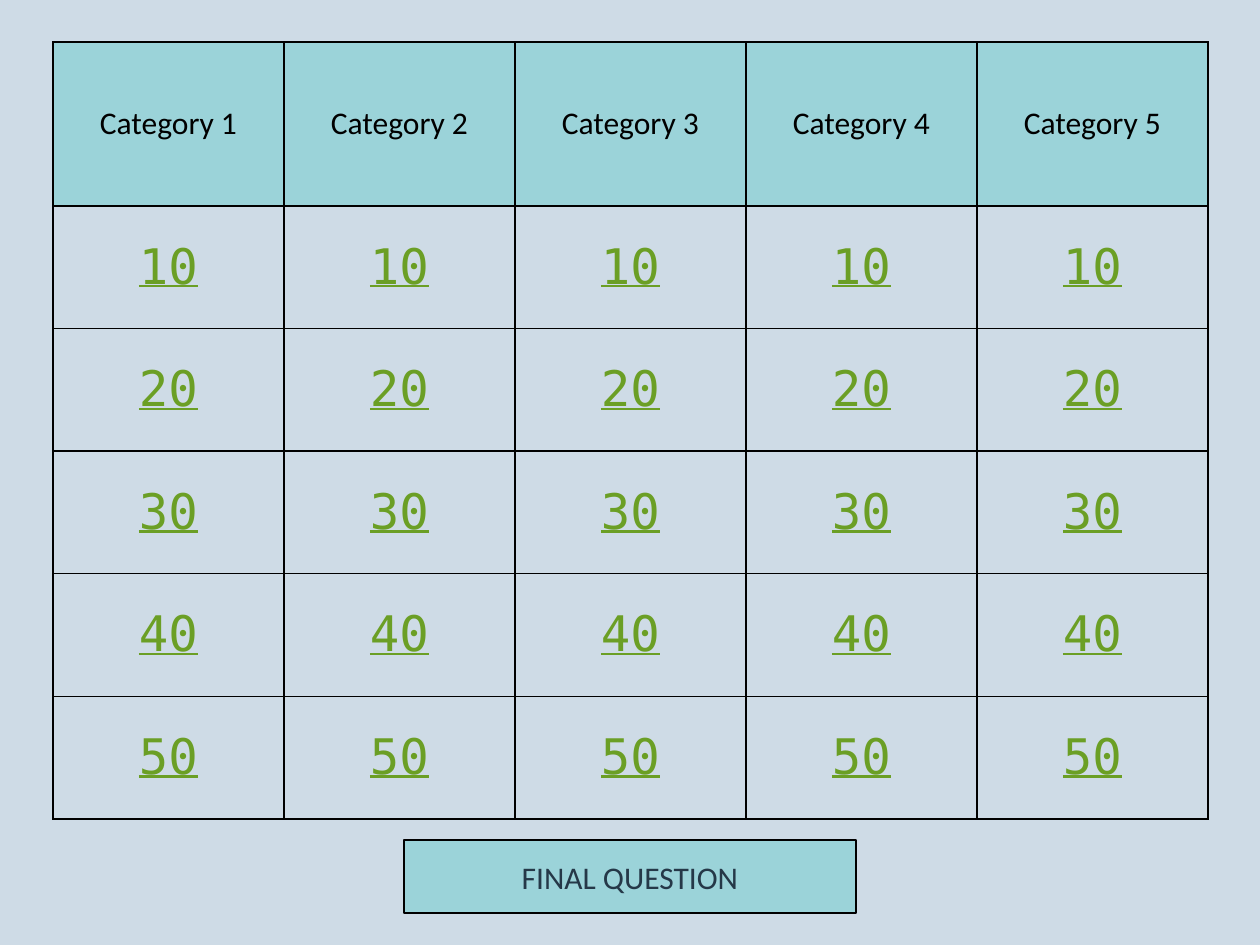
from lxml import etree
from pptx import Presentation
from pptx import util as u
from pptx.dml.color import RGBColor
from pptx.enum import shapes, text
from pptx.oxml import ns

PX = 914400 / 126
COLORS = {
    "background": "CEDBE6",
    "panel": "9BD3D9",
    "border": "000000",
    "category": "000000",
    "points": "6B9F25",
    "final": "253848",
}
CATEGORIES = [f"Category {n}" for n in range(1, 6)]
POINTS = [10, 20, 30, 40, 50]


def px(n):
    """Turn px into EMU."""
    return u.Emu(round(n * PX))


def rgb(name):
    """Look up a named colour."""
    return RGBColor.from_string(COLORS[name])


def write(tf, words, size, font, color, underline=False):
    """Set one centred, formatted line of text."""
    tf.text = words
    p = tf.paragraphs[0]
    p.alignment = text.PP_ALIGN.CENTER
    r = p.runs[0]
    r.font.size = u.Pt(size)
    r.font.name = font
    r.font.bold = False
    r.font.underline = underline
    r.font.color.rgb = rgb(color)
    return p


def add_space_before(p, percent):
    """Set paragraph spacing as a percentage of the line."""
    before = etree.SubElement(p._p.get_or_add_pPr(), ns.qn("a:spcBef"))
    etree.SubElement(before, ns.qn("a:spcPct"), val=str(percent * 1000))


def add_borders(cell):
    """Draw a one-point line on each side of a cell."""
    tcPr = cell._tc.get_or_add_tcPr()
    for i, side in enumerate(("lnL", "lnR", "lnT", "lnB")):
        ln = etree.Element(ns.qn(f"a:{side}"), w=str(u.Pt(1)))
        fill = etree.SubElement(ln, ns.qn("a:solidFill"))
        etree.SubElement(fill, ns.qn("a:srgbClr"), val=COLORS["border"])
        tcPr.insert(i, ln)


def add_board(slide, x, y, w, h, head_h):
    """Place the table of categories and point values."""
    rows, cols = len(POINTS) + 1, len(CATEGORIES)
    table = slide.shapes.add_table(rows, cols, px(x), px(y), px(w), px(h)).table
    table.first_row = table.horz_banding = False
    for col in table.columns:
        col.width = px(w / cols)
    for i, row in enumerate(table.rows):
        row.height = px((h - head_h) / len(POINTS) if i else head_h)
        for cell, category in zip(row.cells, CATEGORIES):
            cell.vertical_anchor = text.MSO_ANCHOR.MIDDLE
            if i:
                cell.fill.background()
                p = write(cell.text_frame, str(POINTS[i - 1]), 28,
                          "DejaVu Sans Mono", "points", True)
            else:
                cell.fill.solid()
                cell.fill.fore_color.rgb = rgb("panel")
                p = write(cell.text_frame, category, 18, "Calibri", "category")
            add_space_before(p, 20)
            add_borders(cell)


def add_final_button(slide, x, y, w, h):
    """Place the button for the last round."""
    sp = slide.shapes.add_shape(shapes.MSO_SHAPE.RECTANGLE, px(x), px(y), px(w), px(h))
    sp.shadow.inherit = False
    sp.fill.solid()
    sp.fill.fore_color.rgb = rgb("panel")
    sp.line.color.rgb = rgb("border")
    sp.line.width = u.Pt(1)
    tf = sp.text_frame
    tf.vertical_anchor = text.MSO_ANCHOR.MIDDLE
    write(tf, "FINAL QUESTION", 18, "Calibri", "final")


def main():
    """Build the game board slide."""
    prs = Presentation()
    prs.slide_width, prs.slide_height = px(1260), px(945)
    slide = prs.slides.add_slide(prs.slide_layouts[6])
    fill = slide.background.fill
    fill.solid()
    fill.fore_color.rgb = rgb("background")
    add_board(slide, 53, 42, 1155, 777, 164)
    add_final_button(slide, 404, 840, 452, 73)
    prs.save("out.pptx")


if __name__ == "__main__":
    main()
